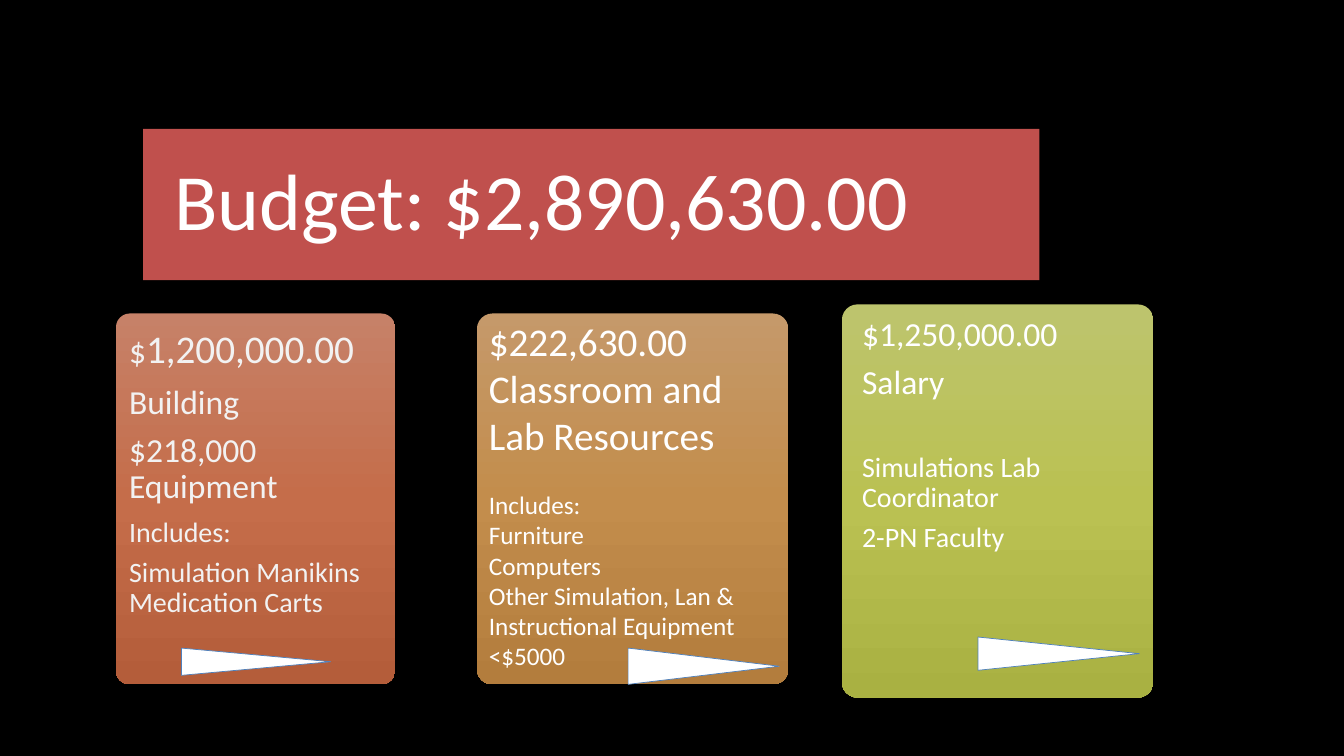
from copy import deepcopy
from dataclasses import dataclass

from pptx import Presentation
from pptx.dml.color import RGBColor
from pptx.enum.shapes import MSO_SHAPE
from pptx.enum.text import MSO_ANCHOR
from pptx.util import Inches, Pt

RECT = MSO_SHAPE.RECTANGLE
ROUND = MSO_SHAPE.ROUNDED_RECTANGLE
WEDGE = MSO_SHAPE.FLOWCHART_EXTRACT
MIDDLE = MSO_ANCHOR.MIDDLE
TOP = MSO_ANCHOR.TOP


@dataclass(frozen=True)
class Theme:
    font: str = "Calibri"
    back: str = "000000"
    title: str = "C0504D"
    white: str = "FFFFFF"
    pale: str = "F2F2F2"
    edge: str = "4F81BD"
    rust: tuple = ("C68168", "C56D4A", "B45D3A")
    tan: tuple = ("C5996A", "C38D4C", "B37D3D")
    lime: tuple = ("BDC46D", "BAC152", "A9B142")
    huge: int = 57
    big: int = 28
    mid: int = 24
    small: int = 20
    tiny: int = 18


THEME = Theme()
TIGHT = {"line": 0.9, "after": 0.35, "inset": (0, 0.04, 0, 0)}
LOOSE = {"line": 1.0, "after": 0, "inset": (0.1, 0.05, 0.1, 0.05)}

CARDS = [
    {
        "box": (1.15, 3.11, 2.77, 3.68),
        "shades": THEME.rust,
        "text": (0.13, 0.12, 2.77, 3.72),
        "wedge": (0.65, 3.32, 1.48, 0.27),
        "color": THEME.pale,
        "style": TIGHT,
        "lines": [
            ([("$", THEME.mid), ("1,200,000.00", THEME.big)], 0),
            ([("Building", THEME.mid)], 0),
            ([("$218,000 Equipment", THEME.mid)], 0),
            ([("Includes:", THEME.small)], 0),
            ([("Simulation Manikins Medication Carts", THEME.small)], 0),
        ],
    },
    {
        "box": (4.73, 3.11, 3.09, 3.68),
        "shades": THEME.tan,
        "text": (0.02, -0.01, 2.98, 4.31),
        "wedge": (1.5, 3.32, 1.5, 0.36),
        "color": THEME.white,
        "style": LOOSE,
        "lines": [
            ([("$222,630.00", THEME.big)], 0),
            ([("Classroom and Lab Resources", THEME.big)], 0),
            ([("Includes:", THEME.tiny)], 22),
            ([("Furniture", THEME.tiny)], 0),
            ([("Computers", THEME.tiny)], 0),
            ([("Other Simulation, Lan & Instructional Equipment <$5000",
               THEME.tiny)], 0),
        ],
    },
    {
        "box": (8.35, 3.02, 3.09, 3.9),
        "shades": THEME.lime,
        "text": (0.2, 0.09, 2.75, 3.68),
        "wedge": (1.35, 3.3, 1.6, 0.33),
        "color": THEME.white,
        "style": TIGHT,
        "lines": [
            ([("$1,250,000.00", THEME.mid)], 0),
            ([("Salary", THEME.mid)], 0),
            ([("Simulations Lab Coordinator", THEME.small)], 28.5),
            ([("2-PN Faculty", THEME.small)], 0),
        ],
    },
]


def tint(name):
    return RGBColor.from_string(name)


def assign(item, values):
    for key, value in values.items():
        setattr(item, key, value)


def add_form(slide, kind, box):
    form = slide.shapes.add_shape(kind, *map(Inches, box))
    form.shadow.inherit = False
    form.line.fill.background()
    return form


def paint(form, color):
    form.fill.solid()
    form.fill.fore_color.rgb = tint(color)


def shade(form, colors):
    fill = form.fill
    fill.gradient()
    fill.gradient_angle = 270
    first, last = fill.gradient_stops
    for stop, color in ((first, colors[0]), (last, colors[1])):
        stop.color.rgb = tint(color)
    stops = form.element.spPr.gradFill.gsLst
    stops.append(deepcopy(stops[-1]))
    for stop, color, place in zip(fill.gradient_stops, colors, (0, 0.5, 1)):
        stop.color.rgb = tint(color)
        stop.position = place


def write(slide, box, lines, color, style, anchor=TOP):
    frame = slide.shapes.add_textbox(*map(Inches, box)).text_frame
    left, top, right, bottom = map(Inches, style["inset"])
    assign(frame, {
        "word_wrap": True, "vertical_anchor": anchor,
        "margin_left": left, "margin_top": top,
        "margin_right": right, "margin_bottom": bottom,
    })
    for index, (runs, before) in enumerate(lines):
        para = frame.paragraphs[0] if index == 0 else frame.add_paragraph()
        size = max(size for _, size in runs)
        assign(para, {
            "line_spacing": style["line"], "space_before": Pt(before),
            "space_after": Pt(size * style["after"]),
        })
        for text, size in runs:
            run = para.add_run()
            run.text = text
            assign(run.font, {"name": THEME.font, "size": Pt(size)})
            run.font.color.rgb = tint(color)


def add_wedge(slide, box):
    left, top, width, height = box
    turned = (left + (width - height) / 2, top + (height - width) / 2,
              height, width)
    wedge = add_form(slide, WEDGE, turned)
    wedge.rotation = 90
    paint(wedge, THEME.white)
    wedge.line.color.rgb = tint(THEME.edge)
    wedge.line.width = Pt(0.5)


def add_title(slide, box):
    paint(add_form(slide, RECT, box), THEME.title)
    style = {"line": 0.9, "after": 0, "inset": (0.31,) * 4}
    lines = [([("Budget: $2,890,630.00", THEME.huge)], 0)]
    write(slide, box, lines, THEME.white, style, MIDDLE)


def add_card(slide, box, card):
    def inside(part):
        left, top, width, height = part
        return box[0] + left, box[1] + top, width, height

    form = add_form(slide, ROUND, box)
    form.adjustments[0] = 0.05
    shade(form, card["shades"])
    add_wedge(slide, inside(card["wedge"]))
    write(slide, inside(card["text"]), card["lines"], card["color"],
          card["style"])


def main():
    deck = Presentation()
    assign(deck, {"slide_width": Inches(13.33), "slide_height": Inches(7.5)})
    slide = deck.slides.add_slide(deck.slide_layouts[6])
    paint(slide.background, THEME.back)
    add_title(slide, (1.42, 1.28, 8.89, 1.5))
    for card in CARDS:
        add_card(slide, card["box"], card)
    deck.save("out.pptx")


if __name__ == "__main__":
    main()
